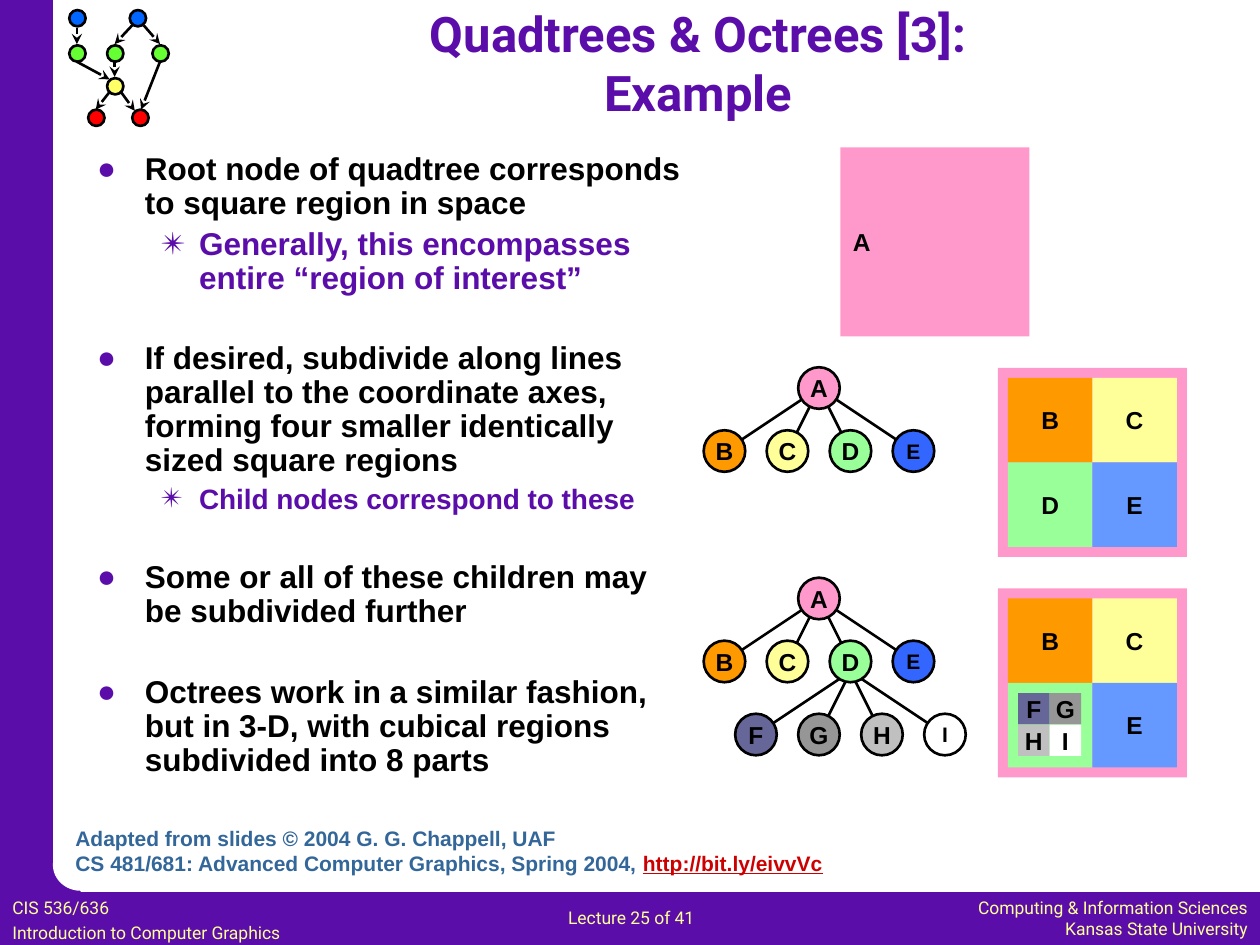
from pptx import Presentation
from pptx.dml.color import RGBColor
from pptx.enum.shapes import MSO_CONNECTOR, MSO_SHAPE
from pptx.enum.text import MSO_ANCHOR, MSO_AUTO_SIZE, PP_ALIGN
from pptx.oxml.ns import qn
from pptx.util import Inches, Pt
from lxml.etree import SubElement

PURPLE = RGBColor(0x5B, 0x0D, 0xAA)
WHITE = RGBColor(0xFF, 0xFF, 0xFF)
BLACK = RGBColor(0, 0, 0)
CREAM = RGBColor(0xFF, 0xFF, 0x99)
STEEL = RGBColor(0x33, 0x66, 0x99)
LINK = RGBColor(0xCC, 0, 0)
PINK = RGBColor(0xFF, 0x99, 0xCC)
ORANGE = RGBColor(0xFF, 0x99, 0)
MINT = RGBColor(0x99, 0xFF, 0x99)
BLUE = RGBColor(0x33, 0x66, 0xFF)
SKY = RGBColor(0x66, 0x99, 0xFF)
SLATE = RGBColor(0x66, 0x66, 0x99)
GRAY = RGBColor(0x96, 0x96, 0x96)
SILVER = RGBColor(0xC0, 0xC0, 0xC0)
LOGO_BLUE = RGBColor(0, 0x66, 0xFF)
LOGO_GREEN = RGBColor(0x66, 0xFF, 0x33)
LOGO_YELLOW = RGBColor(0xFF, 0xFF, 0x66)
RED = RGBColor(0xFF, 0, 0)

RECT, OVAL = MSO_SHAPE.RECTANGLE, MSO_SHAPE.OVAL

prs = Presentation()
prs.slide_width, prs.slide_height = Inches(10), Inches(7.5)
s = prs.slides.add_slide(prs.slide_layouts[1])


def add_shape(kind, x, y, w, h, fill, label="", outlined=False, size=14,
              align=PP_ALIGN.CENTER):
    sp = s.shapes.add_shape(kind, Inches(x), Inches(y), Inches(w), Inches(h))
    sp.shadow.inherit = False
    sp.fill.solid()
    sp.fill.fore_color.rgb = fill
    if outlined:
        sp.line.color.rgb = BLACK
        sp.line.width = Pt(1.5)
    else:
        sp.line.fill.background()
    if label:
        tf = sp.text_frame
        tf.word_wrap = False
        tf.vertical_anchor = MSO_ANCHOR.MIDDLE
        tf.margin_top = tf.margin_bottom = 0
        if kind == OVAL or w < 0.3:
            tf.margin_left = tf.margin_right = 0
        p = tf.paragraphs[0]
        p.alignment = align
        r = p.add_run()
        r.text = label
        r.font.name, r.font.size, r.font.bold = "Arial", Pt(size), True
        r.font.color.rgb = BLACK


def add_line(x1, y1, x2, y2, arrow=False):
    c = s.shapes.add_connector(MSO_CONNECTOR.STRAIGHT, Inches(x1), Inches(y1),
                               Inches(x2), Inches(y2))
    c.line.color.rgb = BLACK
    c.line.width = Pt(1.5)
    if arrow:
        SubElement(c.line._get_or_add_ln(), qn("a:tailEnd"), type="stealth")
    SubElement(c._element.spPr, qn("a:effectLst"))


# Purple frame with a rounded inner corner
add_shape(RECT, 0, 7.08, 10, 0.42, PURPLE)
add_shape(RECT, 0, 0, 0.42, 7.5, PURPLE)
add_shape(RECT, 0.2, 6.85, 0.44, 0.44, PURPLE)
add_shape(OVAL, 0.42, 6.66, 0.44, 0.41, WHITE)

# Small network in the corner
for x, y, color in [(0.55, 0.36, LOGO_GREEN), (0.55, 0.08, LOGO_BLUE),
                    (0.85, 0.36, LOGO_GREEN), (1.03, 0.08, LOGO_BLUE),
                    (1.21, 0.36, LOGO_GREEN), (0.85, 0.62, LOGO_YELLOW),
                    (0.7, 0.87, RED), (1.05, 0.87, RED)]:
    add_shape(OVAL, x, y, 0.13, 0.13, color, outlined=True)
for ends in [(0.61, 0.22, 0.61, 0.35), (1.05, 0.2, 0.91, 0.35),
             (1.14, 0.2, 1.27, 0.35), (0.61, 0.49, 0.87, 0.63),
             (0.91, 0.49, 0.91, 0.61), (1.27, 0.49, 1.12, 0.87),
             (0.96, 0.73, 1.07, 0.88), (0.87, 0.73, 0.76, 0.87)]:
    add_line(*ends, arrow=True)

# Title
title = s.shapes.title
title.left, title.top = Inches(1.25), Inches(0.08)
title.width, title.height = Inches(8.58), Inches(0.83)
tf = title.text_frame
tf.auto_size = MSO_AUTO_SIZE.NONE
tf.vertical_anchor = MSO_ANCHOR.MIDDLE
for i, text in enumerate(["Quadtrees & Octrees [3]:", "Example"]):
    p = tf.add_paragraph() if i else tf.paragraphs[0]
    p.alignment = PP_ALIGN.CENTER
    r = p.add_run()
    r.text = text
    r.font.name, r.font.size, r.font.bold = "Roboto", Pt(28), True
    r.font.color.rgb = PURPLE

# Bullet list: level, size, text
body = s.placeholders[1]
body.left, body.top = Inches(0.67), Inches(1.17)
body.width, body.height = Inches(4.92), Inches(5.17)
tf = body.text_frame
tf.auto_size = MSO_AUTO_SIZE.NONE
bullets = [
    (0, 18, "Root node of quadtree corresponds to square region in space"),
    (1, 18, "Generally, this encompasses entire “region of interest”"),
    (0, 18, "If desired, subdivide along lines parallel to the coordinate axes, "
            "forming four smaller identically sized square regions"),
    (1, 16, "Child nodes correspond to these"),
    (0, 18, "Some or all of these children may be subdivided further"),
    (0, 18, "Octrees work in a similar fashion, but in 3-D, with cubical regions "
            "subdivided into 8 parts"),
]
for i, (level, size, text) in enumerate(bullets):
    p = tf.add_paragraph() if i else tf.paragraphs[0]
    pPr = p._p.get_or_add_pPr()
    pPr.set("marL", str(Inches((0.38, 0.81)[level])))
    pPr.set("indent", str(-Inches((0.38, 0.31)[level])))
    SubElement(SubElement(pPr, qn("a:buClr")), qn("a:srgbClr"), val=str(PURPLE))
    SubElement(pPr, qn("a:buChar"), char="●✴"[level])
    p.level = level
    p.line_spacing = 0.9
    p.space_before = Pt(0 if i == 0 else 3.6 if level else 26.5)
    r = p.add_run()
    r.text = text
    r.font.name, r.font.size, r.font.bold = "Arial", Pt(size), True
    r.font.color.rgb = PURPLE if level else BLACK

# Trees: edges first, then nodes
D = 0.33
children = [("B", ORANGE, 14), ("C", CREAM, 14), ("D", MINT, 14), ("E", BLUE, 12)]
grandchildren = [("F", SLATE, 14), ("G", GRAY, 14), ("H", SILVER, 14), ("I", WHITE, 12)]
root_only = [("A", PINK, 14)]
families = [  # parent x, y, first child x, child y, nodes
    (6.5, 3.08, 5.75, 3.58, children),
    (6.5, 4.75, 5.75, 5.25, children),
    (6.75, 5.33, 6, 5.83, grandchildren),
]
for px, py, x, y, nodes in families:
    for i in range(len(nodes)):
        add_line(px, py, x + 0.5 * i, y)
roots = [(0, 0, 6.5, y, root_only) for y in (3.08, 4.75)]
for _, _, x, y, nodes in families + roots:
    for i, (label, color, size) in enumerate(nodes):
        add_shape(OVAL, x + 0.5 * i - D / 2, y - D / 2, D, D, color, label, True, size)

# Square regions: the root, then two levels of subdivision
add_shape(RECT, 6.67, 1.17, 1.5, 1.5, PINK, "A", align=PP_ALIGN.LEFT)
for y in (2.92, 4.67):
    add_shape(RECT, 7.92, y, 1.5, 1.5, PINK)
quarters = [("B", ORANGE), ("C", CREAM), ("D", MINT), ("E", SKY)]
split_quarters = [("B", ORANGE), ("C", CREAM), ("", MINT), ("E", SKY)]
sixteenths = [("F", SLATE), ("G", GRAY), ("H", SILVER), ("I", WHITE)]
for x, y, side, cells in [(8, 3, 0.67, quarters), (8, 4.75, 0.67, split_quarters),
                          (8.08, 5.5, 0.25, sixteenths)]:
    for i, (label, color) in enumerate(cells):
        add_shape(RECT, x + i % 2 * side, y + i // 2 * side, side, side, color, label)

# Source credit and footers: place, alignment, font, size, gap, lines of runs
LEFT, RIGHT = PP_ALIGN.LEFT, PP_ALIGN.RIGHT
texts = [
    (0.5, 6.5, 6.4, 0.5, LEFT, "Arial", 12, 0, [
        [("Adapted from slides © 2004 G. G. Chappell, UAF", STEEL)],
        [("CS 481/681: Advanced Computer Graphics, Spring 2004, ", STEEL),
         ("http://bit.ly/eivvVc", LINK)]]),
    (0, 7.07, 2.95, 0.44, LEFT, "Roboto", 10, 2, [
        [("CIS 536/636", CREAM)], [("Introduction to Computer Graphics", CREAM)]]),
    (4.41, 7.15, 1.52, 0.27, LEFT, "Roboto", 10, 0, [[("Lecture 25 of 41", CREAM)]]),
    (7.18, 7.07, 2.82, 0.43, RIGHT, "Roboto", 10, 0, [
        [("Computing & Information Sciences", CREAM)],
        [("Kansas State University", CREAM)]]),
]
for x, y, w, h, align, font, size, gap, lines in texts:
    tf = s.shapes.add_textbox(Inches(x), Inches(y), Inches(w), Inches(h)).text_frame
    tf.word_wrap = True
    for i, runs in enumerate(lines):
        p = tf.add_paragraph() if i else tf.paragraphs[0]
        p.alignment = align
        p.space_before = Pt(gap if i else 0)
        for text, color in runs:
            r = p.add_run()
            r.text = text
            r.font.name, r.font.size = font, Pt(size)
            r.font.bold = font == "Arial"
            r.font.underline = color == LINK
            r.font.color.rgb = color

prs.save("out.pptx")
